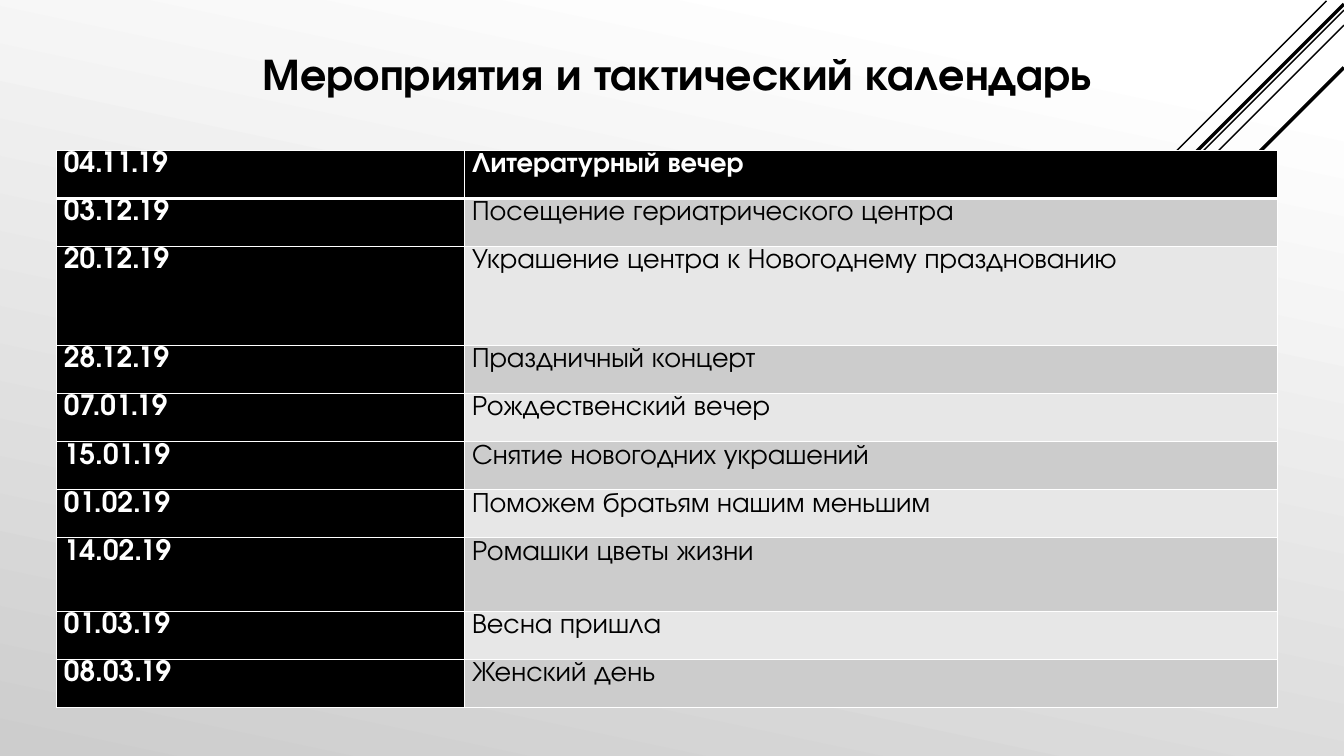
from typing import NamedTuple

from lxml.etree import SubElement
from pptx import Presentation
from pptx.dml.color import RGBColor
from pptx.enum.shapes import MSO_CONNECTOR
from pptx.enum.text import MSO_ANCHOR, MSO_AUTO_SIZE, PP_ALIGN
from pptx.oxml.ns import qn
from pptx.util import Pt

FONT = "TeX Gyre Adventor"
BLACK = RGBColor(0x00, 0x00, 0x00)
WHITE = RGBColor(0xFF, 0xFF, 0xFF)
SILVER = RGBColor(0xCD, 0xCD, 0xCD)
DARK_BAND = RGBColor(0xCC, 0xCC, 0xCC)
LIGHT_BAND = RGBColor(0xE7, 0xE7, 0xE7)

ROW_HEIGHT = 34.35
COLUMN_WIDTHS = (291.6, 580.4)


class Event(NamedTuple):
    date: str
    name: str
    height: float = ROW_HEIGHT


class Stripe(NamedTuple):
    """A diagonal that falls to the left at 45 degrees."""
    right: float
    top: float
    length: float
    weight: float


EVENTS = (
    Event("04.11.19", "Литературный вечер"),
    Event("03.12.19", "Посещение гериатрического центра"),
    Event("20.12.19", "Украшение центра к Новогоднему празднованию", 70.7),
    Event("28.12.19", "Праздничный концерт"),
    Event("07.01.19", "Рождественский вечер"),
    Event("15.01.19", "Снятие новогодних украшений"),
    Event("01.02.19", "Поможем братьям нашим меньшим"),
    Event("14.02.19", "Ромашки цветы жизни", 52.5),
    Event("01.03.19", "Весна пришла"),
    Event("08.03.19", "Женский день"),
)

STRIPES = (
    Stripe(947.5, 0.7, 300, 1),
    Stripe(960, 7.2, 479, 1),
    Stripe(960, 18, 390, 1),
    Stripe(960, 2.9, 382, 2.5),
    Stripe(960, 48.2, 342, 2.5),
)


def write(frame, text: str, *, size: float, color: RGBColor, bold: bool,
          align: PP_ALIGN = PP_ALIGN.LEFT, spacing: float = 1.0) -> None:
    para = frame.paragraphs[0]
    para.alignment = align
    para.line_spacing = spacing
    span = para.add_run()
    span.text = text
    span.font.name = FONT
    span.font.size = Pt(size)
    span.font.bold = bold
    span.font.color.rgb = color


def paint_background(page) -> None:
    fill = page.background.fill
    fill.gradient()
    fill.gradient_angle = 258
    for stop, position, color in zip(fill.gradient_stops, (0.1, 1), (WHITE, SILVER)):
        stop.position = position
        stop.color.rgb = color


def draw_stripe(page, stripe: Stripe) -> None:
    line = page.shapes.add_connector(
        MSO_CONNECTOR.STRAIGHT, Pt(stripe.right), Pt(stripe.top),
        Pt(stripe.right - stripe.length), Pt(stripe.top + stripe.length))
    line.line.color.rgb = BLACK
    line.line.width = Pt(stripe.weight)
    SubElement(line._element.spPr, qn("a:effectLst"))


def format_title(page, text: str) -> None:
    title = page.shapes.title
    title.left, title.top = Pt(149.8), Pt(28.8)
    title.width, title.height = Pt(668.9), Pt(46)
    frame = title.text_frame
    frame.word_wrap = False
    frame.auto_size = MSO_AUTO_SIZE.SHAPE_TO_FIT_TEXT
    frame.vertical_anchor = MSO_ANCHOR.MIDDLE
    write(frame, text, size=32, color=BLACK, bold=True, align=PP_ALIGN.CENTER)


def add_borders(cell, **weights: float) -> None:
    """Draw white borders; the keywords are the sides L, R, T and B."""
    properties = cell._tc.get_or_add_tcPr()
    for side, weight in weights.items():
        border = SubElement(properties, qn(f"a:ln{side}"), w=str(Pt(weight)))
        fill = SubElement(border, qn("a:solidFill"))
        SubElement(fill, qn("a:srgbClr"), val=str(WHITE))


def fill_cell(cell, text: str, row: int, column: int) -> None:
    strong = row == 0 or column == 0
    band = DARK_BAND if row % 2 else LIGHT_BAND
    cell.margin_left = cell.margin_right = Pt(5.2)
    cell.margin_top = cell.margin_bottom = Pt(0)
    add_borders(cell, L=1, R=1, T=3 if row == 1 else 1, B=3 if row == 0 else 1)
    cell.fill.solid()
    cell.fill.fore_color.rgb = BLACK if strong else band
    write(cell.text_frame, text, size=20, color=WHITE if strong else BLACK,
          bold=strong, spacing=1.07)


def add_calendar(page) -> None:
    height = sum(event.height for event in EVENTS)
    table = page.shapes.add_table(
        len(EVENTS), len(COLUMN_WIDTHS), Pt(40.4), Pt(107.4),
        Pt(sum(COLUMN_WIDTHS)), Pt(height)).table
    for column, width in zip(table.columns, COLUMN_WIDTHS):
        column.width = Pt(width)
    for row, event in enumerate(EVENTS):
        table.rows[row].height = Pt(event.height)
        for column, text in enumerate((event.date, event.name)):
            fill_cell(table.cell(row, column), text, row, column)


def main() -> None:
    deck = Presentation()
    deck.slide_width, deck.slide_height = Pt(960), Pt(540)
    page = deck.slides.add_slide(deck.slide_layouts.get_by_name("Title Only"))
    paint_background(page)
    for stripe in STRIPES:
        draw_stripe(page, stripe)
    format_title(page, "Мероприятия и тактический календарь")
    add_calendar(page)
    deck.save("out.pptx")


if __name__ == "__main__":
    main()
